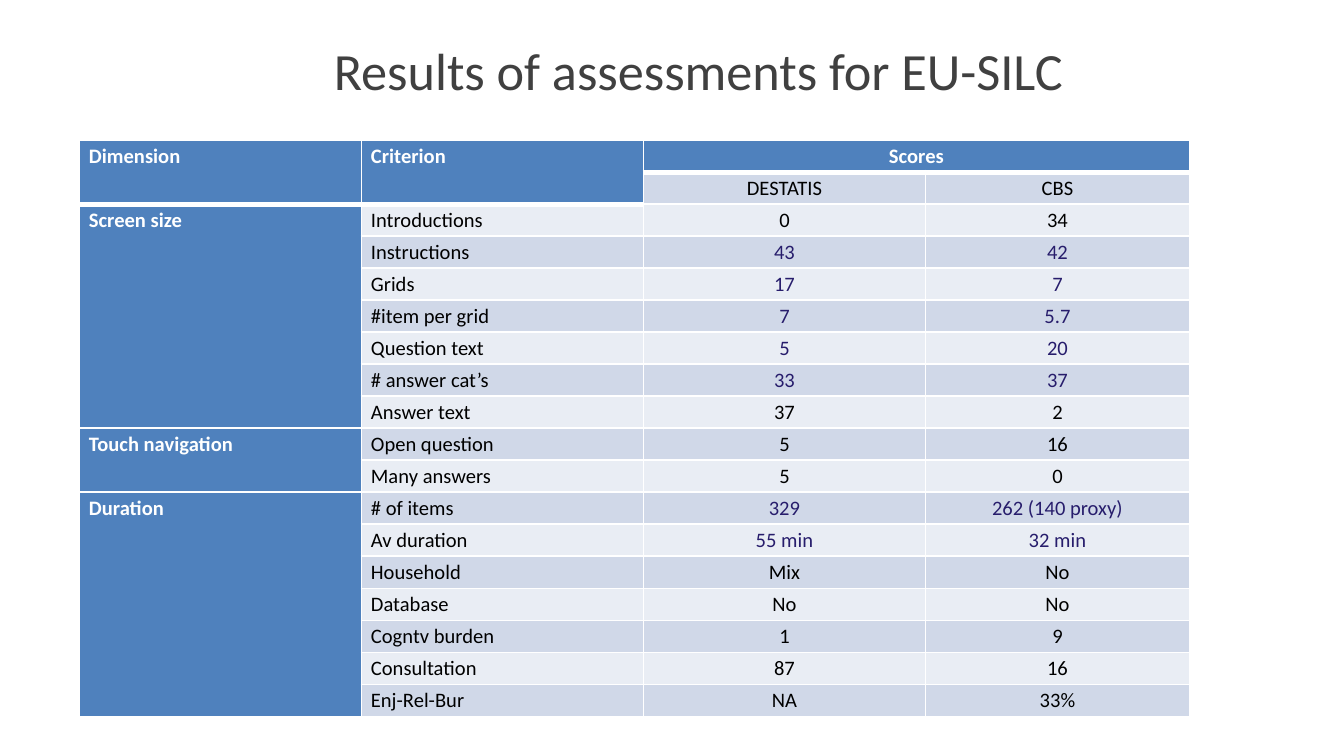
from lxml import etree
from pptx import Presentation
from pptx.dml.color import RGBColor
from pptx.enum.text import MSO_ANCHOR, PP_ALIGN
from pptx.oxml.ns import qn
from pptx.util import Cm, Pt

CENTER, JUST = PP_ALIGN.CENTER, PP_ALIGN.JUSTIFY
TOP, MIDDLE = MSO_ANCHOR.TOP, MSO_ANCHOR.MIDDLE

COLORS = {
    "title": "404040",
    "head": "4F81BD",
    "dark": "D0D8E8",
    "light": "E9EDF4",
    "white": "FFFFFF",
    "black": "000000",
    "mark": "271D6C",
}

# Dimension -> (criterion, DESTATIS score, CBS score, marked)
GROUPS = {
    "Screen size": [
        ("Introductions", "0", "34", False),
        ("Instructions", "43", "42", True),
        ("Grids", "17", "7", True),
        ("#item per grid", "7", "5.7", True),
        ("Question text", "5", "20", True),
        ("# answer cat’s", "33", "37", True),
        ("Answer text", "37", "2", False),
    ],
    "Touch navigation": [
        ("Open question", "5", "16", False),
        ("Many answers", "5", "0", False),
    ],
    "Duration": [
        ("# of items", "329", "262 (140 proxy)", True),
        ("Av duration", "55 min", "32 min", True),
        ("Household", "Mix", "No", False),
        ("Database", "No", "No", False),
        ("Cogntv burden", "1", "9", False),
        ("Consultation", "87", "16", False),
        ("Enj-Rel-Bur", "NA", "33%", False),
    ],
}
HEADS = 2
WIDTHS = (5.33, 5.33, 5.33, 4.99)


class Deck:
    font = "Calibri"

    def __init__(self, width, height):
        self.prs = Presentation()
        self.prs.slide_width, self.prs.slide_height = Cm(width), Cm(height)
        self.slide = self.prs.slides.add_slide(self.prs.slide_layouts[5])

    def text(self, frame, words, size, color, align, bold=False):
        para = frame.paragraphs[0]
        para.alignment = align
        run = para.add_run()
        run.text = words
        run.font.name, run.font.size, run.font.bold = self.font, Pt(size), bold
        run.font.color.rgb = RGBColor.from_string(COLORS[color])
        return para

    def title(self, words, left, top, width, height):
        shape = self.slide.shapes.title
        shape.left, shape.top = Cm(left), Cm(top)
        shape.width, shape.height = Cm(width), Cm(height)
        shape.text_frame.vertical_anchor = MIDDLE
        self.text(shape.text_frame, words, 28, "title", CENTER)

    def table(self, left, top, height, widths, count):
        frame = self.slide.shapes.add_table(
            count, len(widths), Cm(left), Cm(top), Cm(sum(widths)), Cm(height))
        grid = frame.table
        for col, width in zip(grid.columns, widths):
            col.width = Cm(width)
        for row in grid.rows:
            row.height = Cm(height) // count
        return grid

    def style(self, cell, fill, base=1):
        """Fill a cell and give it white borders, the bottom one base points wide."""
        props = cell._tc.get_or_add_tcPr()
        for side, width in (("L", 1), ("R", 1), ("T", 1), ("B", base)):
            line = etree.SubElement(props, qn("a:ln" + side), w=str(Pt(width)))
            solid = etree.SubElement(line, qn("a:solidFill"))
            etree.SubElement(solid, qn("a:srgbClr"), val=COLORS["white"])
        cell.fill.solid()
        cell.fill.fore_color.rgb = RGBColor.from_string(COLORS[fill])

    def label(self, cell, words, color="black", align=CENTER, bold=False):
        cell.margin_left = cell.margin_right = Cm(0.18)
        cell.margin_top = cell.margin_bottom = 0
        cell.vertical_anchor = TOP
        para = self.text(cell.text_frame, words, 11, color, align, bold)
        para.line_spacing = 1.15

    def head(self, grid, words, row, col, rows=1, cols=1, align=JUST, base=1):
        """Add a blue heading that spans rows and columns."""
        end = row + rows - 1
        for r in range(row, row + rows):
            for c in range(col, col + cols):
                self.style(grid.cell(r, c), "head", base)
        cell = grid.cell(row, col)
        cell.merge(grid.cell(end, col + cols - 1))
        self.label(cell, words, "white", align, True)


def main():
    deck = Deck(25.4, 14.29)
    deck.title("Results of assessments for EU-SILC", 2.64, 0.36, 21.11, 1.9)

    count = HEADS + sum(len(rows) for rows in GROUPS.values())
    grid = deck.table(1.5, 2.65, 10.9, WIDTHS, count)

    # Heading rows
    deck.head(grid, "Dimension", 0, 0, rows=HEADS, base=3)
    deck.head(grid, "Criterion", 0, 1, rows=HEADS, base=3)
    deck.head(grid, "Scores", 0, 2, cols=2, align=CENTER, base=3)
    for col, name in enumerate(("DESTATIS", "CBS"), 2):
        deck.style(grid.cell(1, col), "dark")
        deck.label(grid.cell(1, col), name)

    # Banded scores, grouped by dimension
    row = HEADS
    for name, items in GROUPS.items():
        deck.head(grid, name, row, 0, rows=len(items))
        for *texts, marked in items:
            for col, words in enumerate(texts, 1):
                cell = grid.cell(row, col)
                deck.style(cell, "dark" if row % 2 else "light")
                deck.label(cell, words,
                           "mark" if marked and col > 1 else "black",
                           CENTER if col > 1 else JUST)
            row += 1

    deck.prs.save("out.pptx")


if __name__ == "__main__":
    main()
